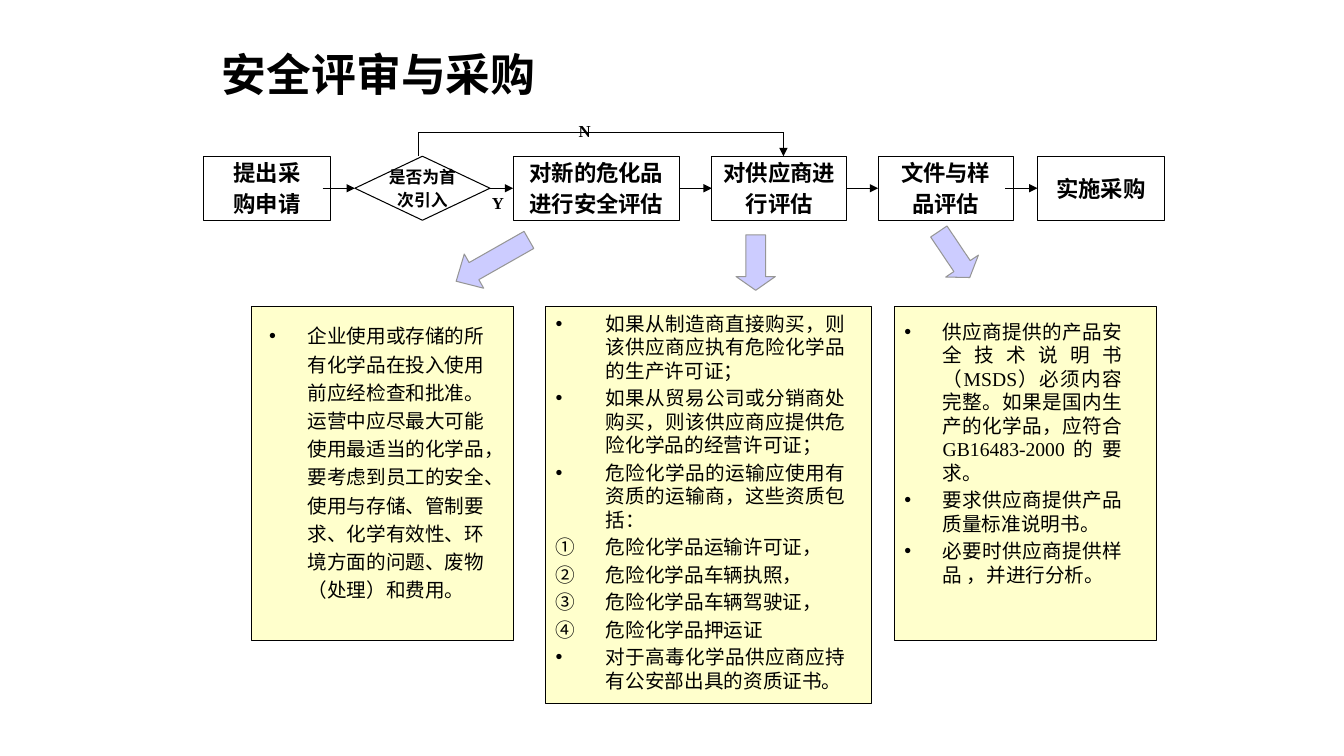
from lxml import etree
from pptx import Presentation
from pptx.dml.color import RGBColor
from pptx.enum.shapes import MSO_CONNECTOR, MSO_SHAPE
from pptx.enum.text import MSO_ANCHOR, MSO_AUTO_SIZE, PP_ALIGN
from pptx.oxml.ns import qn
from pptx.util import Inches, Pt

RECT, DIAMOND = MSO_SHAPE.RECTANGLE, MSO_SHAPE.FLOWCHART_DECISION
ARROW, STRAIGHT = MSO_SHAPE.DOWN_ARROW, MSO_CONNECTOR.STRAIGHT
LEFT, CENTER, JUSTIFY = PP_ALIGN.LEFT, PP_ALIGN.CENTER, PP_ALIGN.JUSTIFY
TOP, MIDDLE = MSO_ANCHOR.TOP, MSO_ANCHOR.MIDDLE
NO_FIT = MSO_AUTO_SIZE.NONE

THEME = {
    "font": "Times New Roman",
    "ink": RGBColor.from_string("000000"),
    "panel": RGBColor.from_string("FFFFCC"),
    "arrow": RGBColor.from_string("CCCCFF"),
    "edge": RGBColor.from_string("969696"),
    "title": 32, "step": 16, "small": 12, "list": 14,
    "line": Pt(0.75),
}

# Grid: square cells, 75 rows down the slide
deck = Presentation()
deck.slide_width, deck.slide_height = Inches(13.33), Inches(7.5)
cell = deck.slide_height / 75
slide = deck.slides.add_slide(deck.slide_layouts[4])
shapes = slide.shapes
slots = {slot.placeholder_format.idx: slot for slot in slide.placeholders}


def grid(*cells):
    return [round(n * cell) for n in cells]


def style(frame, size, bold, align, anchor):
    frame.auto_size = NO_FIT
    frame.vertical_anchor = anchor
    for i, para in enumerate(frame.paragraphs):
        para.alignment = align
        para.space_before = Pt(0.2 * size if i else 0)
        for run in para.runs:
            run.font.name = THEME["font"]
            run.font.size = Pt(size)
            run.font.bold = bold
            run.font.color.rgb = THEME["ink"]


# Title
title = shapes.title
title.left, title.top, title.width, title.height = grid(21, 3.6, 84.8, 7.5)
title.text_frame.text = "安全评审与采购"
style(title.text_frame, THEME["title"], True, LEFT, MIDDLE)

# Flow steps: kind, left, width, type size, text
row, high = 15.5, 6.35
mid = row + high / 2
steps = [
    (RECT, 20.2, 12.6, "step", "提出采\n购申请"),
    (DIAMOND, 35.2, 13.4, "small", "是否为首\n次引入"),
    (RECT, 50.9, 16.5, "step", "对新的危化品\n进行安全评估"),
    (RECT, 70.6, 13.4, "step", "对供应商进\n行评估"),
    (RECT, 87.1, 13.4, "step", "文件与样\n品评估"),
    (RECT, 102.9, 12.6, "step", "实施采购"),
]
boxes = []
for kind, left, wide, size, text in steps:
    box = shapes.add_shape(kind, *grid(left, row, wide, high))
    box.shadow.inherit = False
    box.fill.background()
    box.line.color.rgb = THEME["ink"]
    box.line.width = THEME["line"]
    box.text_frame.text = text
    box.text_frame.word_wrap = False
    style(box.text_frame, THEME[size], True, CENTER, MIDDLE)
    boxes.append(box)

# Lines: start, end, arrowhead, box left, box entered
bypass, out, back = 13.1, 41.5, 77.7
lines = [
    ((32, mid), (35.2, mid), True, None, 1),
    ((48.6, mid), (50.9, mid), True, 1, 2),
    ((67.4, mid), (70.6, mid), True, 2, 3),
    ((84, mid), (87.1, mid), True, 3, 4),
    ((99.7, mid), (102.9, mid), True, None, 5),
    ((out, bypass), (out, row), False, None, None),
    ((out, bypass), (back, bypass), False, None, None),
    ((back, bypass), (back, row), True, None, None),
]
for start, end, head, source, target in lines:
    link = shapes.add_connector(STRAIGHT, *grid(*start, *end))
    if source is not None:
        link.begin_connect(boxes[source], 3)
    if target is not None:
        link.end_connect(boxes[target], 1)
    link.line.color.rgb = THEME["ink"]
    link.line.width = THEME["line"]
    if head:
        etree.SubElement(link.line._get_or_add_ln(), qn("a:tailEnd"), type="triangle")
    etree.SubElement(link._element.spPr, qn("a:effectLst"))

# Branch labels
for text, left, top, wide in [("N", 56.4, 11.5, 5.5), ("Y", 47.8, 18.6, 2.4)]:
    label = shapes.add_textbox(*grid(left, top, wide, 3))
    label.text_frame.text = text
    label.text_frame.word_wrap = True
    style(label.text_frame, THEME["small"], True, LEFT, TOP)

# Block arrows: left, top, height, turn, head share
for left, top, tall, turn, head in [
    (46.9, 21.7, 8.3, 60.4, 0.52),
    (73, 23.3, 5.5, 0, 0.35),
    (92.7, 22.5, 5.5, 326.1, 0.35),
]:
    arrow = shapes.add_shape(ARROW, *grid(left, top, 3.9, tall))
    arrow.shadow.inherit = False
    arrow.rotation = turn
    arrow.adjustments[0], arrow.adjustments[1] = 0.5, head
    arrow.fill.solid()
    arrow.fill.fore_color.rgb = THEME["arrow"]
    arrow.line.color.rgb = THEME["edge"]
    arrow.line.width = THEME["line"]

# List panels: slot, frame, insets (left, top, right), indent, align, spacing, items
# Items that start with "#" are numbered
panels = [
    (2, (24.9, 30.4, 26, 33.1), (1.8, 1.3, 2.6), 3.8, LEFT, 1.2, [
        "企业使用或存储的所有化学品在投入使用前应经检查和批准。运营中应尽最大可能使用最适当的化学品，"
        "要考虑到员工的安全、使用与存储、管制要求、化学有效性、环境方面的问题、废物（处理）和费用。",
    ]),
    (4, (54.1, 30.4, 32.3, 39.4), (1, 0.5, 2.6), 5, JUSTIFY, 1.0, [
        "如果从制造商直接购买，则该供应商应执有危险化学品的生产许可证；",
        "如果从贸易公司或分销商处购买，则该供应商应提供危险化学品的经营许可证；",
        "危险化学品的运输应使用有资质的运输商，这些资质包括：",
        "#危险化学品运输许可证，",
        "#危险化学品车辆执照，",
        "#危险化学品车辆驾驶证，",
        "#危险化学品押运证",
        "对于高毒化学品供应商应持有公安部出具的资质证书。",
    ]),
    (3, (88.7, 30.4, 26, 33.1), (1, 1.3, 3.4), 3.8, JUSTIFY, 1.0, [
        "供应商提供的产品安全技术说明书（MSDS）必须内容完整。如果是国内生产的化学品，"
        "应符合GB16483-2000的要求。",
        "要求供应商提供产品质量标准说明书。",
        "必要时供应商提供样品 ，并进行分析。",
    ]),
]
for idx, place, inset, indent, align, pitch, items in panels:
    panel = slots[idx]
    panel.left, panel.top, panel.width, panel.height = grid(*place)
    panel.fill.solid()
    panel.fill.fore_color.rgb = THEME["panel"]
    panel.line.color.rgb = THEME["ink"]
    panel.line.width = THEME["line"]
    frame = panel.text_frame
    frame.margin_left, frame.margin_top, frame.margin_right = grid(*inset)
    frame.text = "\n".join(item.lstrip("#") for item in items)
    step = grid(indent)[0]
    for para, item in zip(frame.paragraphs, items):
        props = para._p.get_or_add_pPr()
        props.set("marL", str(step))
        props.set("indent", str(-step))
        if item.startswith("#"):
            etree.SubElement(props, qn("a:buAutoNum"), type="circleNumDbPlain")
        else:
            etree.SubElement(props, qn("a:buChar"), char="•")
        para.line_spacing = pitch
    style(frame, THEME["list"], False, align, TOP)

# Unused slot
spare = slots[1]._element
spare.getparent().remove(spare)

deck.save("out.pptx")
